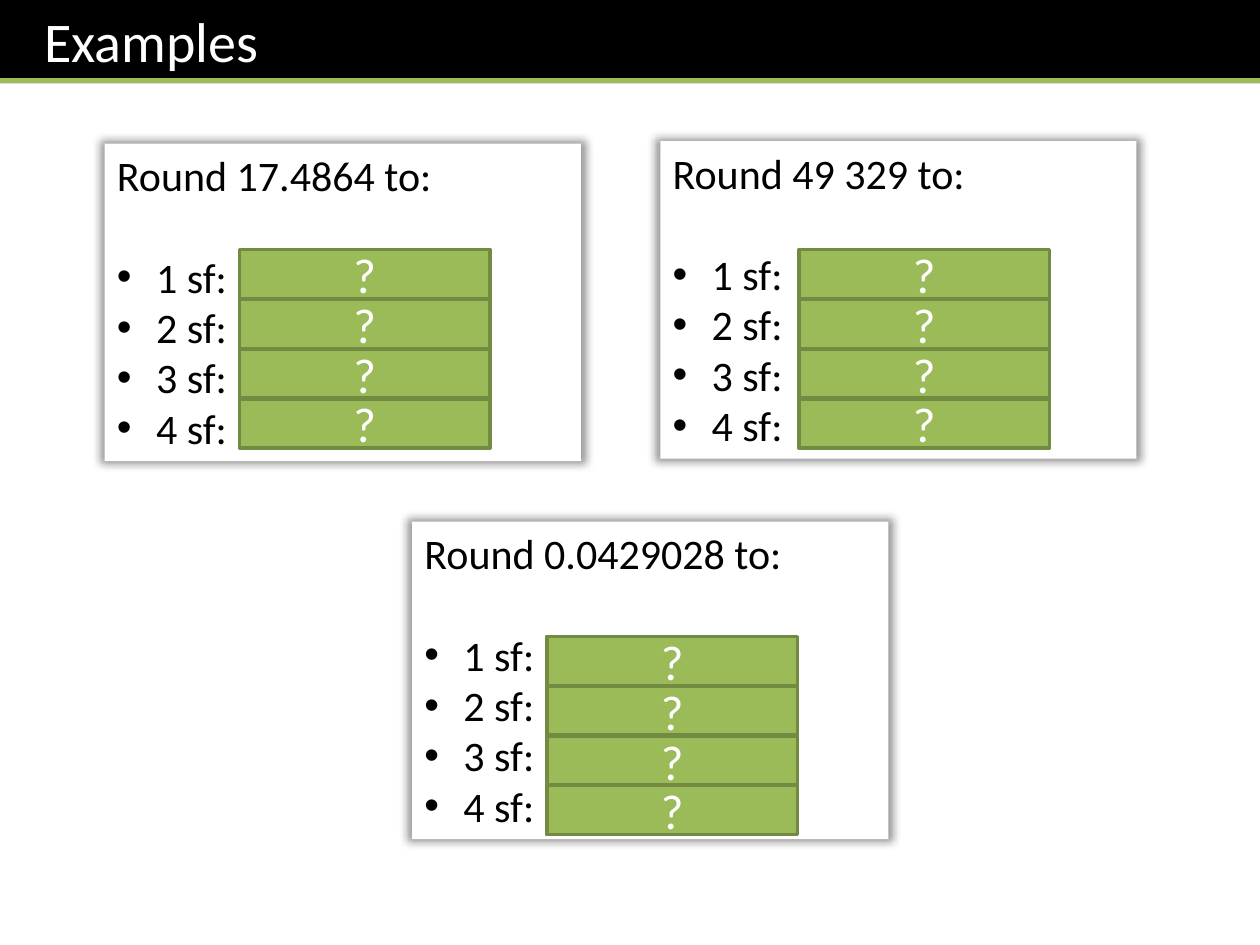
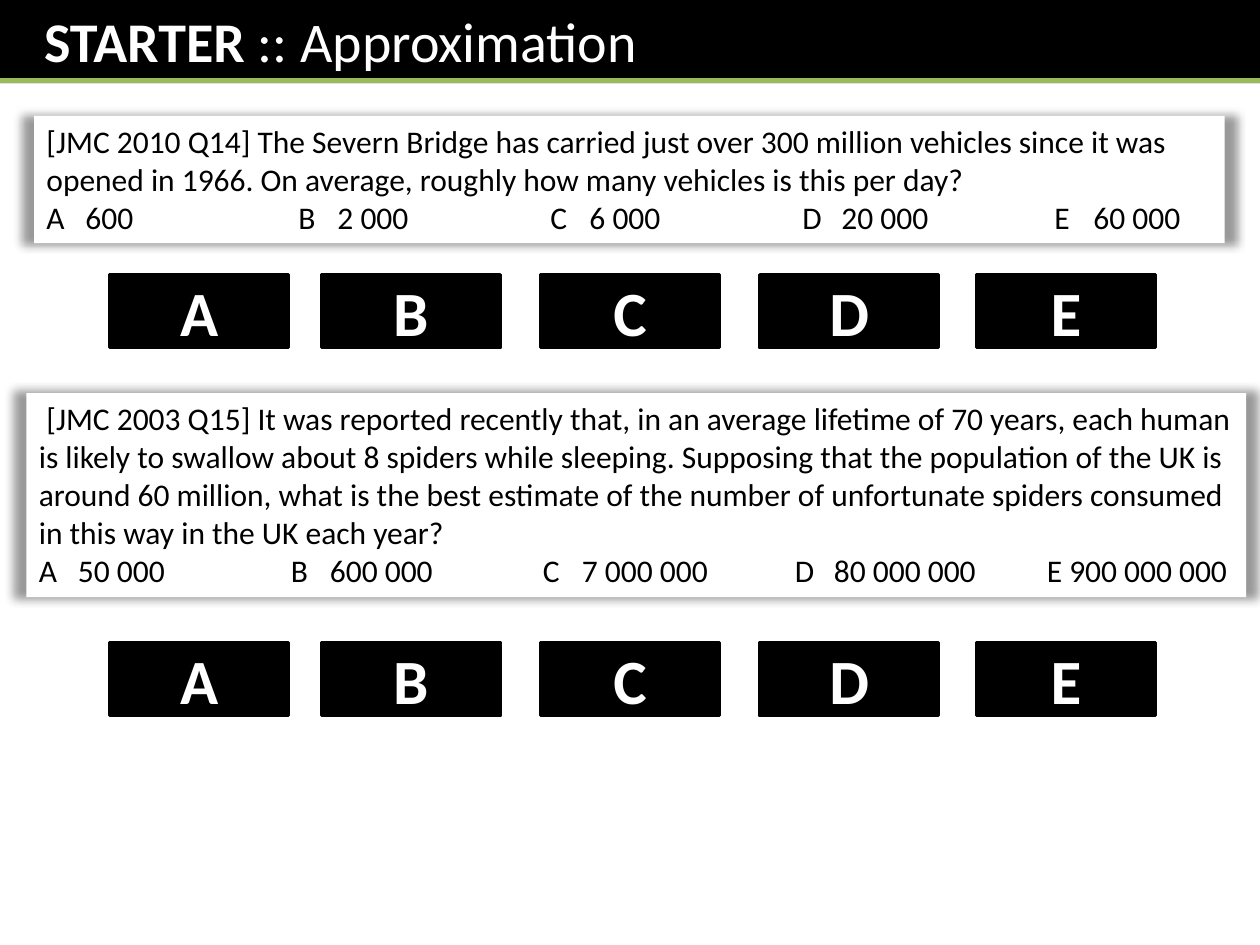
from dataclasses import dataclass
from typing import Optional

from lxml.etree import SubElement
from pptx import Presentation
from pptx.dml.color import RGBColor
from pptx.enum.shapes import MSO_CONNECTOR as Link, MSO_SHAPE as Kind
from pptx.enum.text import MSO_ANCHOR as Anchor, PP_ALIGN as Align
from pptx.oxml.ns import qn
from pptx.util import Inches, Pt

HUES = {"black": "000000", "white": "FFFFFF", "green": "9BBB59", "edge": "738A42"}
FONT = "Calibri"
LETTERS = "ABCDE"
KEY_LEFTS = (0.87, 2.55, 4.29, 6.03, 7.75)
ROWS = 4
COVER_STEP = 1.58 / ROWS
TAB_STEP = 2
VALUE_GAP = 0.31


@dataclass
class Card:
    """A rounding task with a column of question mark boxes."""
    left: float
    top: float
    number: str
    cover_left: float
    cover_top: float


@dataclass
class Quiz:
    """A multiple choice question with a row of letter keys below it."""
    left: float
    top: float
    width: float
    height: float
    question: str
    values: tuple[str, ...]
    key_top: float
    indent: float = 0
    tight_last: bool = False


CARDS = (
    Card(0.83, 1.14, "17.4864", 1.9, 1.98),
    Card(5.24, 1.12, "49 329", 6.34, 1.98),
    Card(3.27, 4.14, "0.0429028", 4.34, 5.05),
)

QUIZZES = (
    Quiz(0.27, 0.92, 9.45, 1.01,
         "[JMC 2010 Q14] The Severn Bridge has carried just over 300 million "
         "vehicles since it was opened in 1966. On average, roughly how many "
         "vehicles is this per day?",
         ("600", "2 000", "6 000", "20 000", "60 000"), 2.18),
    Quiz(0.21, 3.12, 9.68, 1.62,
         "[JMC 2003 Q15] It was reported recently that, in an average lifetime "
         "of 70 years, each human is likely to swallow about 8 spiders while "
         "sleeping. Supposing that the population of the UK is around 60 "
         "million, what is the best estimate of the number of unfortunate "
         "spiders consumed in this way in the UK each year?",
         ("50 000", "600 000", "7 000 000", "80 000 000", "900 000 000"), 5.1,
         indent=0.06, tight_last=True),
)


def paint(name: str) -> RGBColor:
    return RGBColor.from_string(HUES[name])


def write(shape, *runs: str, size: float, hue: str = "black", bold: tuple = (),
          align=Align.LEFT, after: float = 0, indent: float = 0,
          bullet: bool = False, tabs: tuple = ()) -> None:
    """Add a paragraph to the shape; bold lists the indexes of bold runs."""
    frame = shape.text_frame
    para = frame.paragraphs[0]
    if para.runs:
        para = frame.add_paragraph()
    para.alignment = align
    para.space_after = Pt(after)
    for i, text in enumerate(runs):
        run = para.add_run()
        run.text = text
        font = run.font
        font.name, font.size, font.bold = FONT, Pt(size), i in bold
        font.color.rgb = paint(hue)
    props = para._p.get_or_add_pPr()
    if indent:
        props.set("indent", str(Inches(indent)))
    if bullet:
        props.set("marL", str(Inches(0.31)))
        props.set("indent", str(Inches(-0.31)))
        SubElement(props, qn("a:buFont"), typeface="Arial")
        SubElement(props, qn("a:buChar"), char="•")
    if tabs:
        stops = SubElement(props, qn("a:tabLst"))
        for tab in tabs:
            SubElement(stops, qn("a:tab"), pos=str(Inches(tab)), algn="l")


def box(slide, left: float, top: float, width: float, height: float,
        fill: str, line: Optional[str] = None, anchor=Anchor.TOP):
    shape = slide.shapes.add_shape(
        Kind.RECTANGLE, Inches(left), Inches(top), Inches(width), Inches(height))
    shape.shadow.inherit = False
    shape.fill.solid()
    shape.fill.fore_color.rgb = paint(fill)
    if line:
        shape.line.color.rgb = paint(line)
        shape.line.width = Pt(2)
    else:
        shape.line.fill.background()
    shape.text_frame.word_wrap = True
    shape.text_frame.vertical_anchor = anchor
    return shape


def panel(slide, left: float, top: float, width: float, height: float):
    """Draw a white box with a soft shadow on all sides."""
    shape = box(slide, left, top, width, height, "white")
    effects = shape._element.spPr.find(qn("a:effectLst"))
    glow = SubElement(effects, qn("a:outerShdw"), blurRad=str(Pt(5)), dist="0",
                      sx="102000", sy="102000", algn="ctr", rotWithShape="0")
    tint = SubElement(glow, qn("a:srgbClr"), val=HUES["black"])
    SubElement(tint, qn("a:alpha"), val="40000")
    return shape


def button(slide, left: float, top: float, width: float, height: float,
           text: str, size: float, fill: str, line: str, bold: tuple = ()) -> None:
    shape = box(slide, left, top, width, height, fill, line, Anchor.MIDDLE)
    write(shape, text, size=size, hue="white", bold=bold, align=Align.CENTER)


def start(deck, *title: str, bold: tuple = ()):
    """Add a slide with the title band and its green rule."""
    slide = deck.slides.add_slide(deck.slide_layouts[6])
    band = box(slide, 0, 0, 10, 0.66, "black")
    band.text_frame.margin_left = Inches(0.35)
    write(band, *title, size=32, hue="white", bold=bold)
    rule = slide.shapes.add_connector(
        Link.STRAIGHT, 0, Inches(0.64), Inches(10), Inches(0.64))
    rule.line.color.rgb = paint("green")
    rule.line.width = Pt(3)
    SubElement(rule._element.spPr, qn("a:effectLst"))
    return slide


def draw_card(slide, card: Card) -> None:
    shape = panel(slide, card.left, card.top, 3.78, 2.52)
    write(shape, f"Round {card.number} to:", size=24, after=29)
    for i in range(ROWS):
        write(shape, f"{i + 1} sf:", size=24, bullet=True)
        button(slide, card.cover_left, card.cover_top + i * COVER_STEP, 1.99, 0.39,
               "?", 28, "green", "edge")


def draw_quiz(slide, quiz: Quiz) -> None:
    shape = panel(slide, quiz.left, quiz.top, quiz.width, quiz.height)
    write(shape, quiz.question, size=18, indent=quiz.indent)
    pairs = [f"{key}\t{value}" for key, value in zip(LETTERS, quiz.values)]
    if quiz.tight_last:
        pairs[-1] = pairs[-1].replace("\t", " ")
    starts = [i * TAB_STEP for i in range(len(pairs))]
    stops = [x + gap for x in starts for gap in (0, VALUE_GAP)][1:]
    write(shape, "\t".join(pairs), size=18, tabs=tuple(stops))
    for key, left in zip(LETTERS, KEY_LEFTS):
        button(slide, left, quiz.key_top, 1.42, 0.58, key, 36, "black", "black", (0,))


def main() -> None:
    deck = Presentation()
    deck.slide_width, deck.slide_height = Inches(10), Inches(7.5)

    slide = start(deck, "Examples")
    for card in CARDS:
        draw_card(slide, card)

    slide = start(deck, "STARTER", " :: Approximation", bold=(0,))
    for quiz in QUIZZES:
        draw_quiz(slide, quiz)

    deck.save("out.pptx")


if __name__ == "__main__":
    main()
